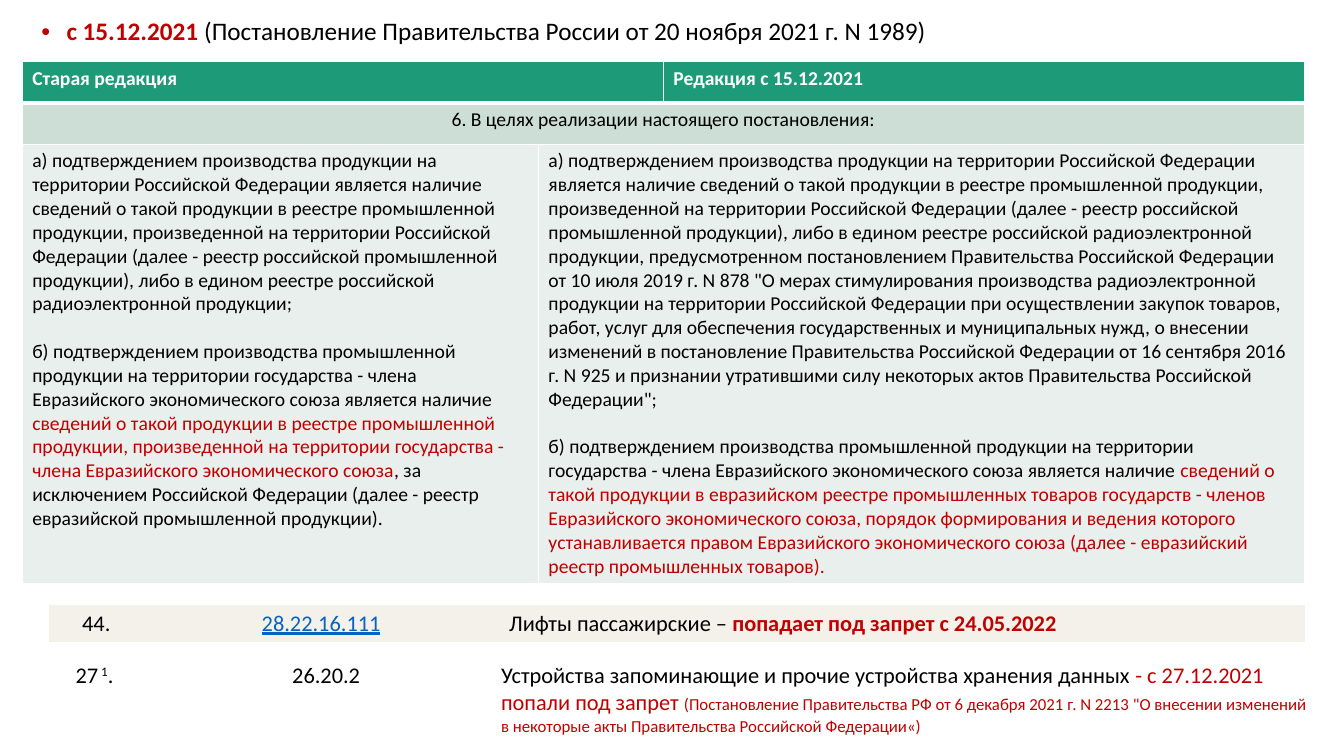
"""Build a slide comparing two wordings of a government decree on industrial products."""
from dataclasses import dataclass

from lxml import etree
from pptx import Presentation, slide as sl, table as tb
from pptx import util as u
from pptx.dml import color
from pptx.enum import text
from pptx.oxml import ns

PX = 9144
FONT = "Calibri"
COLORS = {
    "white": "FFFFFF", "black": "000000", "red": "C00000", "link": "0563C1",
    "header": "1D9A78", "subheader": "CDDED6", "clause": "E8EFEC", "lift": "F3F1E9",
}

CLAUSE_A = (
    "а) подтверждением производства продукции на территории Российской Федерации является "
    "наличие сведений о такой продукции в реестре промышленной продукции, произведенной на "
    "территории Российской Федерации (далее - реестр российской промышленной продукции), "
    "либо в едином реестре российской радиоэлектронной продукции"
)
CLAUSE_A_ADDED = (
    ", предусмотренном постановлением Правительства Российской Федерации от 10 июля 2019 г. "
    "N 878 \"О мерах стимулирования производства радиоэлектронной продукции на территории "
    "Российской Федерации при осуществлении закупок товаров, работ, услуг для обеспечения "
    "государственных и муниципальных нужд, о внесении изменений в постановление "
    "Правительства Российской Федерации от 16 сентября 2016 г. N 925 и признании "
    "утратившими силу некоторых актов Правительства Российской Федерации\""
)
CLAUSE_B = (
    "б) подтверждением производства промышленной продукции на территории государства - члена "
    "Евразийского экономического союза является наличие "
)
CLAUSE_B_OLD = (
    "сведений о такой продукции в реестре промышленной продукции, произведенной на "
    "территории государства - члена Евразийского экономического союза"
)
CLAUSE_B_OLD_END = (
    ", за исключением Российской Федерации (далее - реестр евразийской промышленной продукции)."
)
CLAUSE_B_NEW = (
    "сведений о такой продукции в евразийском реестре промышленных товаров государств - "
    "членов Евразийского экономического союза, порядок формирования и ведения которого "
    "устанавливается правом Евразийского экономического союза (далее - евразийский реестр "
    "промышленных товаров)."
)
STORAGE_DECREE = (
    "(Постановление Правительства РФ от 6 декабря 2021 г. N 2213 \"О внесении изменений "
    "в некоторые акты Правительства Российской Федерации«)"
)


@dataclass
class Run:
    """A stretch of text in one format; size 0 takes the size of its table."""
    text: str
    color: str = "black"
    size: int = 0
    bold: bool = False
    underline: bool = False
    baseline: int = 0


@dataclass
class Cell:
    """A table cell with its grid place, fill and paragraphs."""
    row: int
    col: int
    fill: str
    paragraphs: list[list[Run]]
    span: int = 1
    centered: bool = False


@dataclass
class Grid:
    """A table with its place, column widths and row heights in px."""
    left: int
    top: int
    cols: list[int]
    rows: list[int]
    size: int
    border: float
    cells: list[Cell]


HEADLINE = [
    Run("с 15.12.2021 ", "red", bold=True),
    Run("(Постановление Правительства России от 20 ноября 2021 г. N 1989)"),
]

GRIDS = [
    Grid(22, 61, [512, 124, 636], [41, 41, 435], 14, 1, [
        Cell(0, 0, "header", [[Run("Старая редакция", "white", bold=True)]], span=2),
        Cell(0, 2, "header", [[Run("Редакция с 15.12.2021", "white", bold=True)]]),
        Cell(1, 0, "subheader", [[Run("6. В целях реализации настоящего постановления:")]],
             span=3, centered=True),
        Cell(2, 0, "clause", [
            [Run(CLAUSE_A + ";")],
            [Run(CLAUSE_B), Run(CLAUSE_B_OLD, "red"), Run(CLAUSE_B_OLD_END)],
        ]),
        Cell(2, 1, "clause", [
            [Run(CLAUSE_A + CLAUSE_A_ADDED + ";")],
            [Run(CLAUSE_B), Run(CLAUSE_B_NEW, "red")],
        ], span=2),
    ]),
    Grid(49, 600, [93, 353, 799], [37], 16, 0, [
        Cell(0, 0, "lift", [[Run("44.")]], centered=True),
        Cell(0, 1, "lift", [[Run("28.22.16.111", "link", underline=True)]], centered=True),
        Cell(0, 2, "lift", [[
            Run("Лифты пассажирские – "),
            Run("попадает под запрет с 24.05.2022", "red", bold=True),
        ]]),
    ]),
    Grid(65, 652, [95, 327, 828], [83], 16, 0, [
        Cell(0, 0, "white", [[Run("27"), Run(" 1", baseline=30000), Run(".")]]),
        Cell(0, 1, "white", [[Run("26.20.2")]], centered=True),
        Cell(0, 2, "white", [[
            Run("Устройства запоминающие и прочие устройства хранения данных "),
            Run("- с 27.12.2021 попали под запрет ", "red"),
            Run(STORAGE_DECREE, "red", size=12),
        ]]),
    ]),
]


def rgb(name: str) -> color.RGBColor:
    """Look up a colour by name."""
    return color.RGBColor.from_string(COLORS[name])


def add_runs(p, runs: list[Run], size: int) -> None:
    """Append formatted runs to a paragraph."""
    for run in runs:
        r = p.add_run()
        r.text = run.text
        r.font.name = FONT
        r.font.size = u.Pt(run.size or size)
        r.font.bold = run.bold
        r.font.underline = run.underline
        r.font.color.rgb = rgb(run.color)
        if run.baseline:
            r.font._element.set("baseline", str(run.baseline))


def set_borders(c: tb._Cell, width: float, bottom: float) -> None:
    """Give a cell white borders, or none at zero width."""
    tcPr = c._tc.get_or_add_tcPr()
    for side in "LRTB":
        w = bottom if side == "B" else width
        ln = etree.SubElement(tcPr, ns.qn(f"a:ln{side}"), w=str(u.Pt(w)))
        if w:
            fill = etree.SubElement(ln, ns.qn("a:solidFill"))
            etree.SubElement(fill, ns.qn("a:srgbClr"), val=COLORS["white"])
        else:
            etree.SubElement(ln, ns.qn("a:noFill"))


def fill_cell(table: tb.Table, cell: Cell, grid: Grid) -> None:
    """Merge, border, colour and write one cell."""
    c = table.cell(cell.row, cell.col)
    if cell.span > 1:
        c.merge(table.cell(cell.row, cell.col + cell.span - 1))
    for col in range(cell.col, cell.col + cell.span):
        part = table.cell(cell.row, col)
        set_borders(part, grid.border, 3 if cell.fill == "header" else grid.border)
        part.fill.solid()
        part.fill.fore_color.rgb = rgb(cell.fill)
    tf = c.text_frame
    for i, runs in enumerate(cell.paragraphs):
        p = tf.add_paragraph() if i else tf.paragraphs[0]
        p.alignment = text.PP_ALIGN.CENTER if cell.centered else text.PP_ALIGN.LEFT
        if i:
            p.space_before = u.Pt(17)
        add_runs(p, runs, grid.size)


def add_grid(s: sl.Slide, grid: Grid) -> None:
    """Draw one table."""
    box = [v * PX for v in (grid.left, grid.top, sum(grid.cols), sum(grid.rows))]
    table = s.shapes.add_table(len(grid.rows), len(grid.cols), *box).table
    table.first_row = table.horz_banding = False
    for column, width in zip(table.columns, grid.cols):
        column.width = width * PX
    for row, height in zip(table.rows, grid.rows):
        row.height = height * PX
    for cell in grid.cells:
        fill_cell(table, cell, grid)


def add_headline(s: sl.Slide) -> None:
    """Write the bulleted line in the body placeholder."""
    sp = s.placeholders[1]
    sp.left, sp.top, sp.width, sp.height = (v * PX for v in (31, 14, 1150, 476))
    tf = sp.text_frame
    tf.auto_size = text.MSO_AUTO_SIZE.NONE
    p = tf.paragraphs[0]
    pPr = p._p.get_or_add_pPr()
    pPr.set("marL", str(25 * PX))
    pPr.set("indent", str(-25 * PX))
    clr = etree.SubElement(pPr, ns.qn("a:buClr"))
    etree.SubElement(clr, ns.qn("a:srgbClr"), val=COLORS["red"])
    etree.SubElement(pPr, ns.qn("a:buFont"), typeface="Arial")
    etree.SubElement(pPr, ns.qn("a:buChar"), char="•")
    p.line_spacing = 0.9
    p.space_before = u.Pt(0)
    add_runs(p, HEADLINE, 18)


def main() -> None:
    """Build and save the slide."""
    prs = Presentation()
    prs.slide_width, prs.slide_height = 1333 * PX, 750 * PX
    s = prs.slides.add_slide(prs.slide_layouts[1])
    title = s.shapes.title._element
    title.getparent().remove(title)
    add_headline(s)
    for grid in GRIDS:
        add_grid(s, grid)
    prs.save("out.pptx")


if __name__ == "__main__":
    main()
